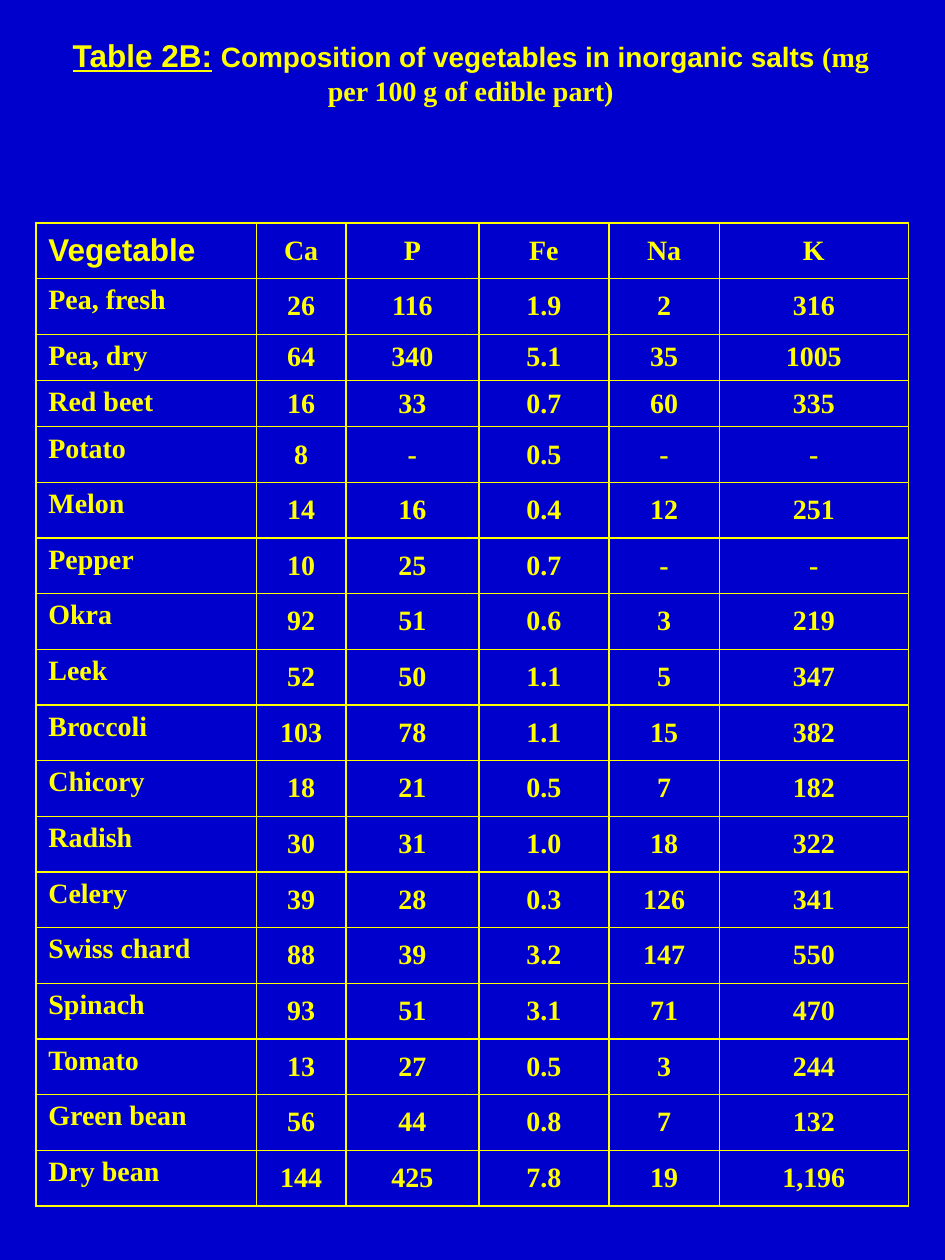
from typing import NamedTuple

from lxml.etree import SubElement
from pptx import Presentation
from pptx.dml.color import RGBColor as RGB
from pptx.enum.text import MSO_ANCHOR as Anchor, PP_ALIGN as Align
from pptx.oxml.ns import qn
from pptx.util import Pt

COLORS = {"background": "0000CC", "ink": "FFFF00"}
SANS, SERIF = "Arial", "Times New Roman"


class Span(NamedTuple):
    text: str
    size: float = 16
    font: str = SERIF
    underline: bool = False


class Vegetable(NamedTuple):
    name: str
    ca: str
    p: str
    fe: str
    na: str
    k: str
    height: float = 31.83


TITLE = [
    Span("Table 2B:", 18, SANS, True),
    Span(" ", 18, SANS),
    Span("Composition of vegetables in inorganic salts", 16, SANS),
    Span(" (mg per 100 g of edible part)"),
]
COLUMN_WIDTHS = [126, 51.14, 76, 74.29, 63.14, 108]
LOW_ROW = 26.1
ROWS = [
    Vegetable("Vegetable", "Ca", "P", "Fe", "Na", "K"),
    Vegetable("Pea, fresh", "26", "116", "1.9", "2", "316"),
    Vegetable("Pea, dry", "64", "340", "5.1", "35", "1005", LOW_ROW),
    Vegetable("Red beet", "16", "33", "0.7", "60", "335", LOW_ROW),
    Vegetable("Potato", "8", "-", "0.5", "-", "-"),
    Vegetable("Melon", "14", "16", "0.4", "12", "251"),
    Vegetable("Pepper", "10", "25", "0.7", "-", "-"),
    Vegetable("Okra", "92", "51", "0.6", "3", "219"),
    Vegetable("Leek", "52", "50", "1.1", "5", "347"),
    Vegetable("Broccoli", "103", "78", "1.1", "15", "382"),
    Vegetable("Chicory", "18", "21", "0.5", "7", "182"),
    Vegetable("Radish", "30", "31", "1.0", "18", "322"),
    Vegetable("Celery", "39", "28", "0.3", "126", "341"),
    Vegetable("Swiss chard", "88", "39", "3.2", "147", "550"),
    Vegetable("Spinach", "93", "51", "3.1", "71", "470"),
    Vegetable("Tomato", "13", "27", "0.5", "3", "244"),
    Vegetable("Green bean", "56", "44", "0.8", "7", "132"),
    Vegetable("Dry bean", "144", "425", "7.8", "19", "1,196"),
]


def write(paragraph, spans: list[Span], align: Align) -> None:
    paragraph.alignment = align
    for span in spans:
        run = paragraph.add_run()
        run.text = span.text
        formats = {"name": span.font, "size": Pt(span.size),
                   "bold": True, "underline": span.underline}
        for attribute, value in formats.items():
            setattr(run.font, attribute, value)
        run.font.color.rgb = RGB.from_string(COLORS["ink"])


def add_borders(cell) -> None:
    properties = cell._tc.get_or_add_tcPr()
    for side in ("lnL", "lnR", "lnT", "lnB"):
        line = SubElement(properties, qn(f"a:{side}"), w=str(Pt(1)))
        fill = SubElement(line, qn("a:solidFill"))
        SubElement(fill, qn("a:srgbClr"), val=COLORS["ink"])


def add_title(slide) -> None:
    frame = slide.shapes.add_textbox(Pt(26), Pt(14.4), Pt(486), Pt(53.3)).text_frame
    frame.word_wrap = True
    frame.vertical_anchor = Anchor.MIDDLE
    write(frame.paragraphs[0], TITLE, Align.CENTER)


def add_salts_table(slide) -> None:
    table = slide.shapes.add_table(
        len(ROWS), len(COLUMN_WIDTHS), Pt(20.5), Pt(127.4),
        Pt(sum(COLUMN_WIDTHS)), Pt(sum(row.height for row in ROWS))).table
    table.horz_banding = table.first_row = False
    for column, width in zip(table.columns, COLUMN_WIDTHS):
        column.width = Pt(width)
    for r, vegetable in enumerate(ROWS):
        table.rows[r].height = Pt(vegetable.height)
        for c, text in enumerate(vegetable[:len(COLUMN_WIDTHS)]):
            cell = table.cell(r, c)
            add_borders(cell)
            cell.fill.background()
            # Vegetable names sit at the top left, all else is centred
            is_name = c == 0 and r > 0
            cell.vertical_anchor = Anchor.TOP if is_name else Anchor.MIDDLE
            span = Span(text, 18, SANS) if r == c == 0 else Span(text)
            write(cell.text_frame.paragraphs[0], [span],
                  Align.LEFT if c == 0 else Align.CENTER)


def main() -> None:
    deck = Presentation()
    deck.slide_width, deck.slide_height = Pt(540), Pt(720)
    slide = deck.slides.add_slide(deck.slide_layouts[6])

    # Background
    slide.background.fill.solid()
    slide.background.fill.fore_color.rgb = RGB.from_string(COLORS["background"])

    # Heading and table
    add_title(slide)
    add_salts_table(slide)
    deck.save("out.pptx")


if __name__ == "__main__":
    main()
